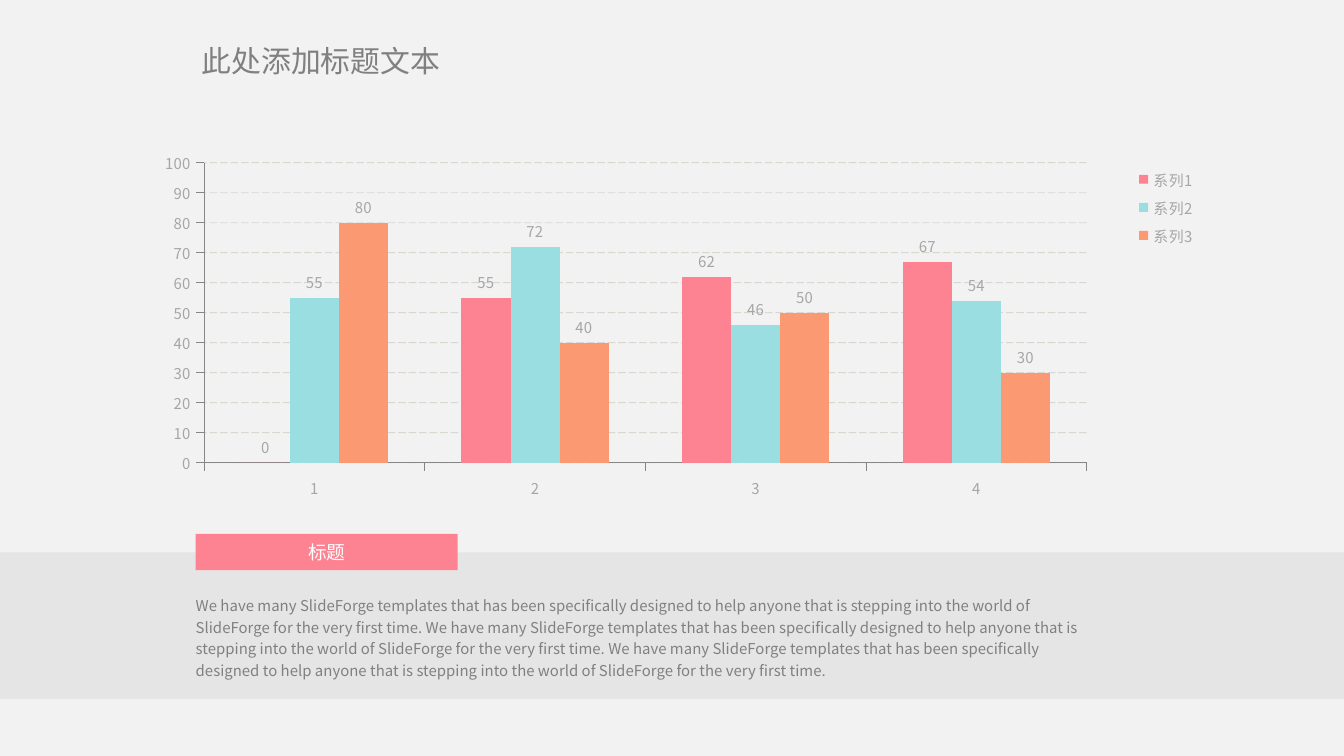
"""Build a slide with a clustered column chart above a captioned text band."""
from dataclasses import dataclass

from lxml.etree import SubElement
from pptx import Presentation
from pptx.chart.data import CategoryChartData
from pptx.dml.color import RGBColor
from pptx.enum.chart import XL_CHART_TYPE, XL_LABEL_POSITION, XL_LEGEND_POSITION, XL_TICK_MARK
from pptx.enum.dml import MSO_LINE
from pptx.enum.shapes import MSO_SHAPE
from pptx.enum.text import MSO_ANCHOR, MSO_AUTO_SIZE, PP_ALIGN
from pptx.oxml import parse_xml
from pptx.oxml.ns import nsdecls, qn
from pptx.util import Cm, Pt

FONT = "Noto Sans CJK SC"
PINK, GREY, LIGHT_GREY, AXIS_GREY = "FD8392", "808080", "A6A6A6", "868686"
SENTENCE = (
    "We have many SlideForge templates that has been specifically designed to help anyone "
    "that is stepping into the world of SlideForge for the very first time."
)


@dataclass
class Box:
    left: float
    top: float
    width: float
    height: float

    def lengths(self) -> tuple:
        return Cm(self.left), Cm(self.top), Cm(self.width), Cm(self.height)


@dataclass
class Series:
    name: str
    values: tuple
    color: str


SERIES = (
    Series("系列1", (0, 55, 62, 67), PINK),
    Series("系列2", (55, 72, 46, 54), "9BDEE2"),
    Series("系列3", (80, 40, 50, 30), "FB9973"),
)


def rgb(color: str) -> RGBColor:
    return RGBColor.from_string(color)


def set_font(font, size: float, color: str) -> None:
    font.name, font.size, font.bold = FONT, Pt(size), False
    font.color.rgb = rgb(color)


def set_east_asian_fonts(element) -> None:
    for latin in list(element.iter(qn("a:latin"))):
        latin.addnext(parse_xml(f'<a:ea {nsdecls("a")} typeface="{latin.get("typeface")}"/>'))


def set_opacity(element, percent: int) -> None:
    for color in element.iter(qn("a:srgbClr")):
        SubElement(color, qn("a:alpha")).set("val", str(percent * 1000))


def set_layout(parent, index: int, target: str, x: float, y: float, w: float, h: float) -> None:
    for old_layout in parent.findall(qn("c:layout")):
        parent.remove(old_layout)
    values = {"xMode": "edge", "yMode": "edge", "x": x, "y": y, "w": w, "h": h}
    if target:
        values = {"layoutTarget": target, **values}
    children = "".join(f'<c:{tag} val="{value}"/>' for tag, value in values.items())
    parent.insert(index, parse_xml(
        f'<c:layout {nsdecls("c")}><c:manualLayout>{children}</c:manualLayout></c:layout>'))


def add_rectangle(slide, box: Box, color: str):
    shape = slide.shapes.add_shape(MSO_SHAPE.RECTANGLE, *box.lengths())
    shape.shadow.inherit = False
    shape.fill.solid()
    shape.fill.fore_color.rgb = rgb(color)
    shape.line.fill.background()
    return shape


def write_text(shape, text: str, size: float, color: str, alignment, anchor):
    frame = shape.text_frame
    frame.text = text
    frame.vertical_anchor = anchor
    paragraph = frame.paragraphs[0]
    paragraph.alignment = alignment
    set_font(paragraph.font, size, color)
    set_east_asian_fonts(shape.element)
    return frame


def add_column_chart(slide, box: Box) -> None:
    data = CategoryChartData()
    data.categories = ["1", "2", "3", "4"]
    for series in SERIES:
        data.add_series(series.name, series.values)
    chart = slide.shapes.add_chart(XL_CHART_TYPE.COLUMN_CLUSTERED, *box.lengths(), data).chart
    chart.has_title = False
    set_font(chart.font, 8, LIGHT_GREY)

    chart.has_legend = True
    chart.legend.position = XL_LEGEND_POSITION.RIGHT
    chart.legend.include_in_layout = False
    set_font(chart.legend.font, 8, LIGHT_GREY)

    plot = chart.plots[0]
    plot.gap_width, plot.overlap, plot.vary_by_categories = 150, 0, False
    for series, style in zip(plot.series, SERIES):
        series.format.fill.solid()
        series.format.fill.fore_color.rgb = rgb(style.color)
        labels = series.data_labels
        labels.show_value = True
        labels.position = XL_LABEL_POSITION.OUTSIDE_END
        set_font(labels.font, 8, LIGHT_GREY)

    for axis in (chart.category_axis, chart.value_axis):
        axis.major_tick_mark = XL_TICK_MARK.OUTSIDE
        axis.format.line.width = Pt(0.5)
        axis.format.line.color.rgb = rgb(AXIS_GREY)
        set_font(axis.tick_labels.font, 8, LIGHT_GREY)
    value_axis = chart.value_axis
    value_axis.minimum_scale, value_axis.maximum_scale, value_axis.major_unit = 0, 100, 10
    value_axis.has_major_gridlines = True
    grid_line = value_axis.major_gridlines.format.line
    grid_line.color.rgb = rgb("A49B84")
    grid_line.width = Pt(0.5)
    grid_line.dash_style = MSO_LINE.LONG_DASH

    chart_xml = chart.element
    set_opacity(next(chart_xml.iter(qn("c:majorGridlines"))), 30)
    set_layout(next(chart_xml.iter(qn("c:plotArea"))), 0, "inner", 0.055, 0.051, 0.78, 0.833)
    set_layout(next(chart_xml.iter(qn("c:legend"))), 1, "", 0.87, 0.05, 0.07, 0.25)
    set_east_asian_fonts(chart_xml)


def main() -> None:
    presentation = Presentation()
    presentation.slide_width, presentation.slide_height = Cm(25.4), Cm(14.29)
    slide = presentation.slides.add_slide(presentation.slide_layouts[5])
    slide.background.fill.solid()
    slide.background.fill.fore_color.rgb = rgb("F2F2F2")

    band = add_rectangle(slide, Box(0, 10.44, 25.4, 2.77), "D9D9D9")
    set_opacity(band.element.spPr, 50)
    add_column_chart(slide, Box(2.68, 2.73, 21.39, 6.81))
    caption = add_rectangle(slide, Box(3.7, 10.09, 4.95, 0.69), PINK)
    write_text(caption, "标题", 10, "FFFFFF", PP_ALIGN.CENTER, MSO_ANCHOR.MIDDLE)

    body = slide.shapes.add_textbox(*Box(3.7, 11.22, 17.2, 1.65).lengths())
    frame = write_text(body, " ".join([SENTENCE] * 3), 8, GREY, PP_ALIGN.LEFT, MSO_ANCHOR.TOP)
    frame.word_wrap = True
    frame.auto_size = MSO_AUTO_SIZE.SHAPE_TO_FIT_TEXT
    frame.margin_left = frame.margin_right = frame.margin_top = frame.margin_bottom = 0
    frame.paragraphs[0].line_spacing = 1.2

    title = slide.shapes.title
    title.left, title.top, title.width, title.height = Box(3.56, 0.68, 5.08, 0.94).lengths()
    frame = write_text(title, "此处添加标题文本", 16, GREY, PP_ALIGN.LEFT, MSO_ANCHOR.TOP)
    frame.word_wrap = False
    frame.auto_size = MSO_AUTO_SIZE.SHAPE_TO_FIT_TEXT

    presentation.save("out.pptx")


if __name__ == "__main__":
    main()
